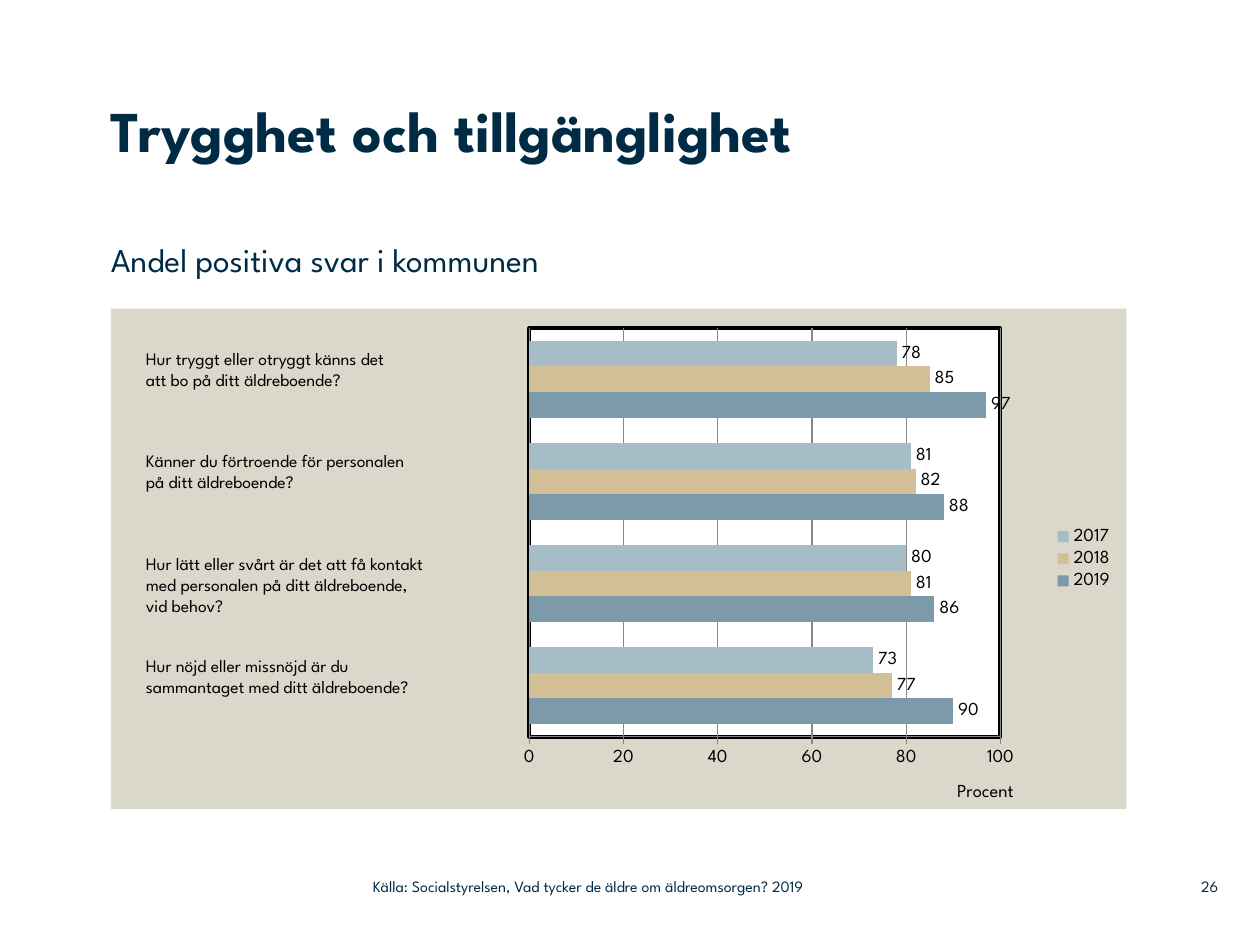
from lxml import etree
from pptx import Presentation
from pptx.chart.data import CategoryChartData
from pptx.dml.color import RGBColor
from pptx.enum.chart import XL_CHART_TYPE, XL_LABEL_POSITION, XL_LEGEND_POSITION, XL_TICK_MARK
from pptx.enum.text import MSO_ANCHOR, MSO_AUTO_SIZE, PP_ALIGN
from pptx.oxml import parse_xml
from pptx.oxml.ns import nsdecls, qn
from pptx.util import Inches, Pt

BAR = XL_CHART_TYPE.BAR_CLUSTERED
OUTSIDE_END = XL_LABEL_POSITION.OUTSIDE_END
LEGEND_RIGHT = XL_LEGEND_POSITION.RIGHT
TICK_OUT, TICK_NONE = XL_TICK_MARK.OUTSIDE, XL_TICK_MARK.NONE
TOP, MIDDLE = MSO_ANCHOR.TOP, MSO_ANCHOR.MIDDLE
GROW, FIXED = MSO_AUTO_SIZE.SHAPE_TO_FIT_TEXT, MSO_AUTO_SIZE.NONE
LEFT, RIGHT = PP_ALIGN.LEFT, PP_ALIGN.RIGHT

FONT = "League Spartan"
COLORS = {"navy": "002B45", "black": "000000", "panel": "DAD7CB", "plot": "FFFFFF",
          "grid": "878787", "2019": "7D9AAA", "2018": "D3BF96", "2017": "A6BCC6"}


def write(sp, box, text, size, color, bold=False, inset=0, anchor=TOP, align=LEFT, fit=FIXED):
    """Place a text shape and fill it, one run per line."""
    sp.left, sp.top, sp.width, sp.height = [Inches(v) for v in box]
    tf = sp.text_frame
    tf.word_wrap = True
    tf.auto_size = fit
    tf.vertical_anchor = anchor
    tf.margin_left = tf.margin_right = Inches(inset)
    tf.margin_top = tf.margin_bottom = Inches(inset / 2)
    p = tf.paragraphs[0]
    p.alignment = align
    for i, line in enumerate(text.split("\n")):
        if i:
            p.add_line_break()
        r = p.add_run()
        r.text = line
        r.font.name, r.font.size, r.font.bold = FONT, Pt(size), bold
        r.font.color.rgb = RGBColor.from_string(COLORS[color])


def set_layout(parent, index, **values):
    """Give a chart part a manual layout in fractions of the chart."""
    for old in parent.findall(qn("c:layout")):
        parent.remove(old)
    layout = etree.Element(qn("c:layout"))
    manual = etree.SubElement(layout, qn("c:manualLayout"))
    for name, value in values.items():
        etree.SubElement(manual, qn("c:" + name)).set("val", str(value))
    parent.insert(index, layout)


prs = Presentation()
prs.slide_width, prs.slide_height = Inches(10), Inches(7.5)
s = prs.slides.add_slide(prs.slide_layouts[5])

# Title and subtitle
write(s.shapes.title, (0.88, 0.75, 8.36, 1.42), "Trygghet och tillgänglighet", 33, "navy", bold=True)
sp = s.shapes.add_textbox(0, 0, 0, 0)
write(sp, (0.88, 1.9, 6.93, 0.45), "Andel positiva svar i kommunen", 19, "navy")

# Chart data, categories from the bottom up
data = CategoryChartData(number_format="0")
data.categories = ["1", "2", "3", "4"]
data.add_series("2019", (90, 86, 88, 97))
data.add_series("2018", (77, 81, 82, 85))
data.add_series("2017", (73, 80, 81, 78))
chart = s.shapes.add_chart(BAR, Inches(0.88), Inches(2.45), Inches(8.06), Inches(3.97), data).chart
chart.has_title = False
chart.font.name, chart.font.size = FONT, Pt(10.5)
chart.font.color.rgb = RGBColor.from_string(COLORS["black"])

# Bars and their labels
plot = chart.plots[0]
plot.gap_width, plot.overlap, plot.vary_by_categories = 100, 0, False
for series in plot.series:
    series.format.fill.solid()
    series.format.fill.fore_color.rgb = RGBColor.from_string(COLORS[series.name])
    labels = series.data_labels
    labels.show_value = True
    labels.position = OUTSIDE_END
    labels.font.name, labels.font.size = FONT, Pt(10.5)
    labels.font.color.rgb = RGBColor.from_string(COLORS["black"])

# Axes
chart.category_axis.visible = False
axis = chart.value_axis
axis.minimum_scale, axis.maximum_scale, axis.major_unit = 0, 100, 20
axis.major_tick_mark, axis.minor_tick_mark = TICK_OUT, TICK_NONE
axis.has_major_gridlines = True
axis.tick_labels.font.name, axis.tick_labels.font.size = FONT, Pt(10.5)
for line in (axis.format.line, axis.major_gridlines.format.line):
    line.color.rgb = RGBColor.from_string(COLORS["grid"])
    line.width = Pt(0.75)
r = axis.axis_title.text_frame.paragraphs[0].add_run()
r.text = "Procent"
r.font.name, r.font.size, r.font.bold = FONT, Pt(10.5), False
set_layout(axis.axis_title._element, 1, xMode="edge", yMode="edge", x=0.83, y=0.94)

# Legend
chart.has_legend = True
chart.legend.position = LEGEND_RIGHT
chart.legend.include_in_layout = False
chart.legend.font.name, chart.legend.font.size = FONT, Pt(10.5)

# Plot frame and chart background
space = chart._chartSpace
area = space.find(".//" + qn("c:plotArea"))
set_layout(area, 0, layoutTarget="inner", xMode="edge", yMode="edge", x=0.412, y=0.039, w=0.464, h=0.817)
FILL = '<c:spPr %s><a:solidFill><a:srgbClr val="%s"/></a:solidFill>%s</c:spPr>'
FRAME = '<a:ln w="28575"><a:solidFill><a:srgbClr val="%s"/></a:solidFill></a:ln>' % COLORS["black"]
area.append(parse_xml(FILL % (nsdecls("c", "a"), COLORS["plot"], FRAME)))
space.find(qn("c:chart")).addnext(
    parse_xml(FILL % (nsdecls("c", "a"), COLORS["panel"], "<a:ln><a:noFill/></a:ln>")))

# Questions beside the bar groups, from the top down
questions = [
    "Hur tryggt eller otryggt känns det\natt bo på ditt äldreboende?",
    "Känner du förtroende för personalen\npå ditt äldreboende?",
    "Hur lätt eller svårt är det att få kontakt\nmed personalen på ditt äldreboende,\nvid behov?",
    "Hur nöjd eller missnöjd är du\nsammantaget med ditt äldreboende?",
]
for i, question in enumerate(questions):
    height = 0.1 + 0.17 * len(question.split("\n"))
    sp = s.shapes.add_textbox(0, 0, 0, 0)
    write(sp, (1.06, 2.71 + 2.44 / 3 * i, 3.16, height), question, 10, "black", inset=0.1, fit=GROW)

# Footer: source and page number
sp = s.shapes.add_textbox(0, 0, 0, 0)
write(sp, (2.96, 6.89, 4.43, 0.29),
      "Källa: Socialstyrelsen, Vad tycker de äldre om äldreomsorgen? 2019", 9, "navy", anchor=MIDDLE)
sp = s.shapes.add_textbox(0, 0, 0, 0)
write(sp, (9.2, 6.89, 0.47, 0.29), "26", 9, "navy", anchor=MIDDLE, align=RIGHT)

prs.save("out.pptx")
